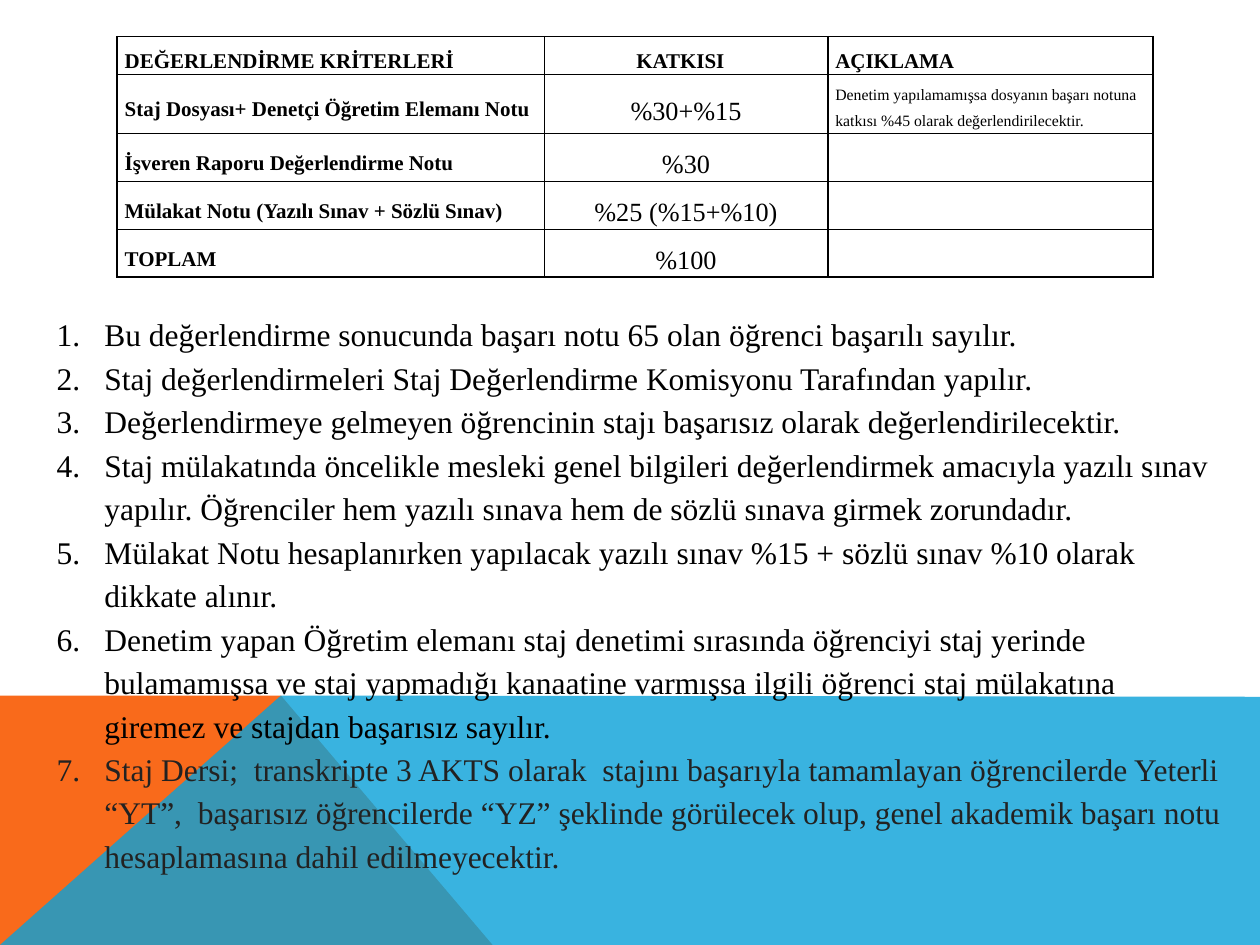
from lxml import etree
from pptx import Presentation
from pptx.dml.color import RGBColor
from pptx.enum.text import MSO_ANCHOR, PP_ALIGN
from pptx.oxml.ns import qn
from pptx.util import Inches, Pt

MID, LEFT, MAIN = MSO_ANCHOR.MIDDLE, PP_ALIGN.LEFT, PP_ALIGN.CENTER
FACE = "Times New Roman"
HUES = {"ink": "000000", "grey": "222222", "fire": "F96A1B", "sky": "08A1D9"}

ROWS = [
    ("DEĞERLENDİRME KRİTERLERİ", "KATKISI", "AÇIKLAMA"),
    ("Staj Dosyası+ Denetçi Öğretim Elemanı Notu", "%30+%15",
     "Denetim yapılamamışsa dosyanın başarı notuna katkısı %45 olarak değerlendirilecektir."),
    ("İşveren Raporu Değerlendirme Notu", "%30", ""),
    ("Mülakat Notu (Yazılı Sınav + Sözlü Sınav)", "%25 (%15+%10)", ""),
    ("TOPLAM", "%100", ""),
]
RULES = [
    "Bu değerlendirme sonucunda başarı notu 65 olan öğrenci başarılı sayılır.",
    "Staj değerlendirmeleri Staj Değerlendirme Komisyonu Tarafından yapılır.",
    "Değerlendirmeye gelmeyen öğrencinin stajı başarısız olarak değerlendirilecektir.",
    "Staj mülakatında öncelikle mesleki genel bilgileri değerlendirmek amacıyla yazılı sınav "
    "yapılır. Öğrenciler hem yazılı sınava hem de sözlü sınava girmek zorundadır.",
    "Mülakat Notu hesaplanırken yapılacak yazılı sınav %15 + sözlü sınav %10 olarak dikkate alınır.",
    "Denetim yapan Öğretim elemanı staj denetimi sırasında öğrenciyi staj yerinde bulamamışsa "
    "ve staj yapmadığı kanaatine varmışsa ilgili öğrenci staj mülakatına giremez ve stajdan "
    "başarısız sayılır.",
    "Staj Dersi;  transkripte 3 AKTS olarak  stajını başarıyla tamamlayan öğrencilerde Yeterli "
    "“YT”,  başarısız öğrencilerde “YZ” şeklinde görülecek olup, genel akademik başarı notu "
    "hesaplamasına dahil edilmeyecektir.",
]
WIDTHS = [3.39, 2.25, 2.58]
HEIGHTS = [0.3, 0.47, 0.38, 0.38, 0.38]
BANDS = [
    ("fire", 100, [(0, 7.5), (0, 5.52), (2.23, 5.52), (3.91, 7.5)]),
    ("sky", 80, [(0, 7.5), (2.23, 5.52), (10, 5.53), (10, 7.5)]),
]
HEAD = {"size": Pt(12), "bold": True}
STYLES = [HEAD, {"size": Pt(15), "bold": False}, {"size": Pt(9), "bold": False}]
CELL = {"margin_left": Inches(0.06), "margin_right": Inches(0.06),
        "margin_top": 0, "margin_bottom": 0, "vertical_anchor": MID}


def apply(item, look):
    for name, value in look.items():
        setattr(item, name, value)


def write(para, text, look, hue="ink"):
    run = para.add_run()
    run.text = text
    apply(run.font, {"name": FACE, **look})
    run.font.color.rgb = RGBColor.from_string(HUES[hue])


def add_band(slide, hue, alpha, points):
    start, *rest = [(round(x * 100), round(y * 100)) for x, y in points]
    pen = slide.shapes.build_freeform(*start, scale=Inches(0.01))
    pen.add_line_segments(rest, close=True)
    band = pen.convert_to_shape()
    band.shadow.inherit = False
    band.line.fill.background()
    band.fill.solid()
    band.fill.fore_color.rgb = RGBColor.from_string(HUES[hue])
    if alpha < 100:
        tint = band.fill._xPr.find(".//" + qn("a:srgbClr"))
        etree.SubElement(tint, qn("a:alpha"), val=str(alpha * 1000))


def add_edges(cell):
    props = cell._tc.get_or_add_tcPr()
    for spot, side in enumerate(("lnL", "lnR", "lnT", "lnB")):
        edge = etree.Element(qn("a:" + side), w=str(Pt(1)))
        fill = etree.SubElement(edge, qn("a:solidFill"))
        etree.SubElement(fill, qn("a:srgbClr"), val=HUES["ink"])
        props.insert(spot, edge)


def add_grid(slide):
    frame = slide.shapes.add_table(
        len(ROWS), len(WIDTHS), Inches(0.93), Inches(0.29),
        Inches(sum(WIDTHS)), Inches(sum(HEIGHTS)))
    table = frame.table
    apply(table, {"first_row": False, "horz_banding": False})
    for col, width in zip(table.columns, WIDTHS):
        col.width = Inches(width)
    for r, (row, height) in enumerate(zip(ROWS, HEIGHTS)):
        table.rows[r].height = Inches(height)
        for c, text in enumerate(row):
            cell = table.cell(r, c)
            apply(cell, CELL)
            cell.fill.background()
            add_edges(cell)
            if text:
                para = cell.text_frame.paragraphs[0]
                apply(para, {"line_spacing": 1.5, "alignment": MAIN if r and c == 1 else LEFT})
                write(para, text, STYLES[c] if r else HEAD)
    label = table.cell(0, 1).text_frame.paragraphs[0]
    label._p.get_or_add_pPr().set("marL", str(Inches(0.67)))


def add_rules(slide):
    box = slide.shapes.add_textbox(Inches(0.35), Inches(2.41), Inches(9.45), Inches(4.63))
    frame = box.text_frame
    frame.word_wrap = True
    for i, text in enumerate(RULES):
        last = i == len(RULES) - 1
        para = frame.add_paragraph() if i else frame.paragraphs[0]
        apply(para, {"line_spacing": 1.15, "space_after": Pt(10 if last else 0)})
        props = para._p.get_or_add_pPr()
        props.set("marL", str(Inches(0.38)))
        props.set("indent", str(Inches(-0.38)))
        etree.SubElement(props, qn("a:buFont"), typeface="+mj-lt")
        etree.SubElement(props, qn("a:buAutoNum"), type="arabicPeriod")
        write(para, text, {"size": Pt(18)}, "grey" if last else "ink")


def main():
    deck = Presentation()
    apply(deck, {"slide_width": Inches(10), "slide_height": Inches(7.5)})
    slide = deck.slides.add_slide(deck.slide_layouts[6])
    for band in BANDS:
        add_band(slide, *band)
    add_grid(slide)
    add_rules(slide)
    deck.save("out.pptx")


if __name__ == "__main__":
    main()
